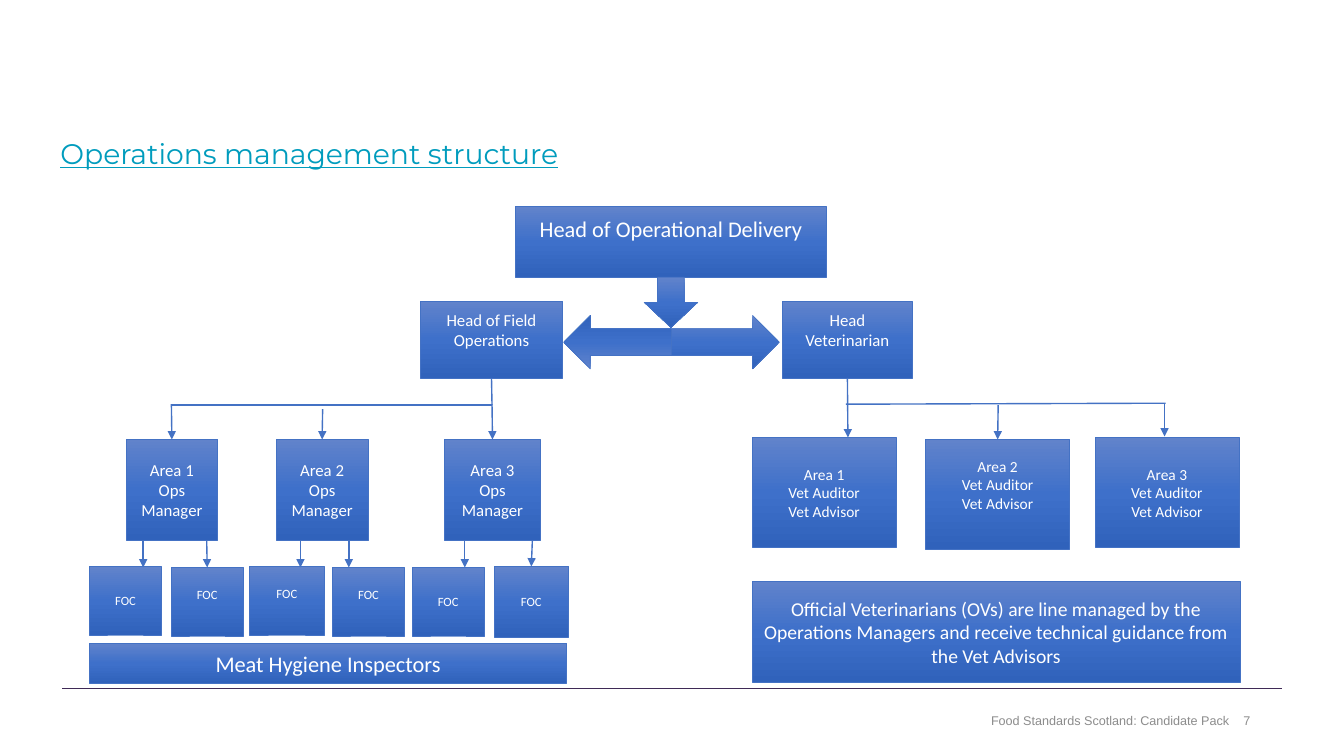
from copy import deepcopy

from lxml.etree import SubElement
from pptx import Presentation
from pptx.dml.color import RGBColor
from pptx.enum.shapes import MSO_CONNECTOR as Line, MSO_SHAPE as Shape
from pptx.enum.text import MSO_ANCHOR as Anchor, PP_ALIGN as Align
from pptx.oxml.ns import qn
from pptx.util import Emu, Pt

COLORS = {"top": "6183CB", "middle": "3E70CA", "bottom": "3062BB", "edge": "4472C4",
          "white": "FFFFFF", "title": "009CBD", "rule": "3F2A56", "footer": "8C8C8C"}
TOP, BOTTOM = 0, 2


def px(length):
    return Emu(length * 9144)


def color(name):
    return RGBColor.from_string(COLORS[name])


class Chart:
    """Draws organisation chart elements on one slide in a shared style."""

    def __init__(self, slide):
        self.shapes = slide.shapes

    def set_text(self, frame, text, size, font, ink, align, anchor):
        frame.word_wrap = True
        frame.vertical_anchor = anchor
        frame.text = text
        for paragraph in frame.paragraphs:
            paragraph.alignment = align
            paragraph.font.size = Pt(size)
            paragraph.font.name = font
            paragraph.font.color.rgb = color(ink)

    def block(self, kind, x, y, width, height):
        shape = self.shapes.add_shape(kind, px(x), px(y), px(width), px(height))
        shape.shadow.inherit = False
        shape.fill.gradient()
        shape.fill.gradient_angle = 270
        stops = shape._element.spPr.find(".//" + qn("a:gsLst"))
        stops.insert(1, deepcopy(stops[0]))
        for stop, name, position in zip(shape.fill.gradient_stops,
                                        ("top", "middle", "bottom"), (0, 0.5, 1)):
            stop.color.rgb = color(name)
            stop.position = position
        shape.line.color.rgb = color("edge")
        shape.line.width = Pt(0.5)
        return shape

    def box(self, text, size, x, y, width, height, below=0):
        shape = self.block(Shape.RECTANGLE, x, y, width, height)
        self.set_text(shape.text_frame, text, size, "Calibri", "white",
                      Align.CENTER, Anchor.MIDDLE)
        shape.text_frame.margin_bottom = px(5 + below)
        return shape

    def label(self, text, size, font, ink, x, y, width, height,
              align=Align.RIGHT, anchor=Anchor.MIDDLE):
        frame = self.shapes.add_textbox(px(x), px(y), px(width), px(height)).text_frame
        self.set_text(frame, text, size, font, ink, align, anchor)
        return frame

    def line(self, x1, y1, x2, y2, arrow=False, ink="edge", source=None, target=None):
        link = self.shapes.add_connector(Line.STRAIGHT, px(x1), px(y1), px(x2), px(y2))
        link.line.color.rgb = color(ink)
        link.line.width = Pt(1)
        properties = link._element.spPr
        if arrow:
            SubElement(properties.find(qn("a:ln")), qn("a:tailEnd"), type="triangle")
        SubElement(properties, qn("a:effectLst"))
        if source is not None:
            link.begin_connect(source, BOTTOM)
        if target is not None:
            link.end_connect(target, TOP)


def main():
    deck = Presentation()
    deck.slide_width, deck.slide_height = px(1333), px(750)
    chart = Chart(deck.slides.add_slide(deck.slide_layouts[6]))

    chart.line(62, 683, 1272, 683, ink="rule")
    title = chart.label("Operations management structure", 20.2, "Montserrat", "title",
                        60, 134, 711, 41, Align.LEFT, Anchor.TOP)
    title.margin_left = 0
    title.paragraphs[0].line_spacing = 0.9
    title.paragraphs[0].font.underline = True

    chart.box("Head of Operational Delivery", 16, 511, 205, 309, 70, below=27)
    chart.block(Shape.DOWN_ARROW, 639, 275, 53, 50)
    chart.block(Shape.RIGHT_ARROW, 666, 313, 107, 53)
    chart.block(Shape.RIGHT_ARROW, 559, 313, 107, 53).rotation = 180
    field_head = chart.box("Head of Field Operations", 12, 417, 299, 141, 76, below=20)
    vet_head = chart.box("Head Veterinarian", 12, 776, 299, 129, 76, below=20)

    ops_areas = [chart.box(f"Area {number}\nOps Manager", 12, x, 436, width, 100)
                 for number, (x, width) in enumerate([(125, 91), (274, 91), (441, 95)], 1)]
    vet_areas = [chart.box(f"Area {number}\nVet Auditor\nVet Advisor", 11, x, y, 143, 109, below)
                 for number, (x, y, below) in enumerate(
                     [(746, 434, 0), (918, 436, 19), (1086, 434, 0)], 1)]
    focs = [chart.box("FOC", 9, *place) for place in (
        (89, 562, 71, 68), (170, 563, 71, 68, 15), (247, 562, 75, 68, 15),
        (330, 563, 71, 68, 15), (409, 563, 71, 68), (490, 562, 74, 70))]
    chart.box("Meat Hygiene Inspectors", 16, 89, 638, 473, 40)
    chart.box("Official Veterinarians (OVs) are line managed by the Operations Managers "
              "and receive technical guidance from the Vet Advisors", 14, 746, 577, 484, 100)

    chart.line(488, 402, 170, 402)
    chart.line(488, 375, 488, 402, source=field_head)
    for area, x, y in zip(ops_areas, (170, 320, 488), (401, 406, 401)):
        chart.line(x, y, x, 436, arrow=True, target=area)
    joined_focs = {205: focs[1], 528: focs[5]}
    for x in (142, 205, 298, 346, 461, 528):
        chart.line(x, 536, x, 563, arrow=True, target=joined_focs.get(x))

    chart.line(841, 375, 841, 434, arrow=True, source=vet_head)
    chart.line(839, 401, 1156, 400)
    chart.line(990, 402, 990, 436, arrow=True, target=vet_areas[1])
    chart.line(1155, 400, 1155, 433, arrow=True)

    chart.label("Food Standards Scotland: Candidate Pack", 9, "Arial", "footer", 802, 695, 427, 40)
    chart.label("7", 9, "Arial", "footer", 950, 695, 300, 40)
    deck.save("out.pptx")


if __name__ == "__main__":
    main()
